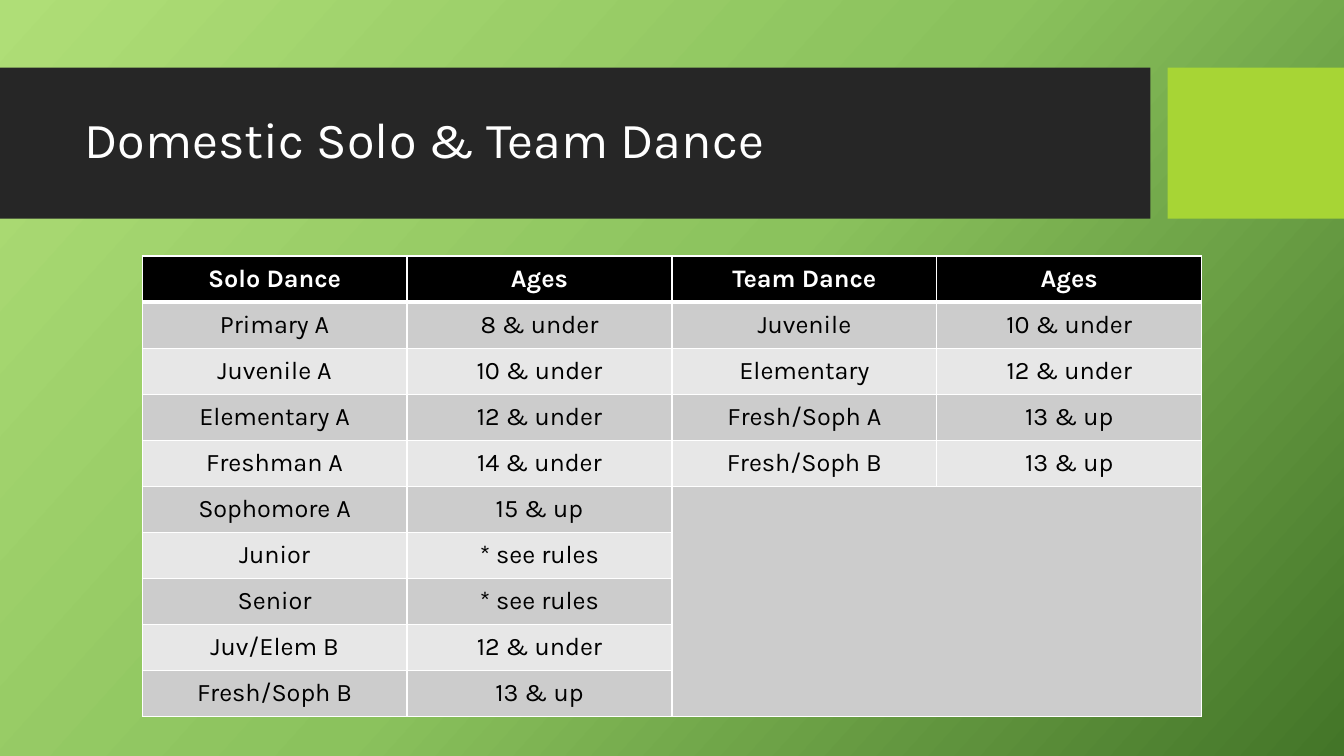
import copy

import pptx
import pptx.dml.color
import pptx.enum.shapes
import pptx.enum.text
import pptx.oxml
import pptx.oxml.ns
import pptx.util

RGBColor = pptx.dml.color.RGBColor
WHITE = RGBColor(0xFF, 0xFF, 0xFF)
BLACK = RGBColor(0x00, 0x00, 0x00)
CHARCOAL = RGBColor(0x26, 0x26, 0x26)
LIME = RGBColor(0xA7, 0xD5, 0x35)
DARK_ROW = RGBColor(0xCC, 0xCC, 0xCC)
LIGHT_ROW = RGBColor(0xE7, 0xE7, 0xE7)
BACKDROP = [(0, RGBColor(0xAF, 0xDE, 0x77)),
            (0.5, RGBColor(0x8B, 0xC2, 0x5D)),
            (1, RGBColor(0x43, 0x75, 0x28))]

Inches = pptx.util.Inches
LEFT = pptx.enum.text.PP_ALIGN.LEFT
CENTER = pptx.enum.text.PP_ALIGN.CENTER


def write(frame, text, size=18, color=BLACK, bold=False, align=CENTER, spacing=1.0):
    frame.text = text
    paragraph = frame.paragraphs[0]
    paragraph.alignment = align
    paragraph.line_spacing = spacing
    font = paragraph.runs[0].font
    font.name = "Karla"
    font.size = pptx.util.Pt(size)
    font.bold = bold
    font.color.rgb = color


def set_borders(cell, **widths):
    properties = cell._tc.get_or_add_tcPr()
    for position, side in enumerate("LRTB"):
        line = pptx.oxml.parse_xml(
            f'<a:ln{side} {pptx.oxml.ns.nsdecls("a")} w="{pptx.util.Pt(widths.get(side, 1))}">'
            f'<a:solidFill><a:srgbClr val="{WHITE}"/></a:solidFill></a:ln{side}>')
        properties.insert(position, line)


deck = pptx.Presentation()
deck.slide_width = Inches(13.33)
deck.slide_height = Inches(7.5)
slide = deck.slides.add_slide(deck.slide_layouts[5])

# Green diagonal background
backdrop = slide.background.fill
backdrop.gradient()
backdrop.gradient_angle = 360 - 42
stop_list = slide._element.find(".//" + pptx.oxml.ns.qn("a:gsLst"))
stop_list.insert(1, copy.deepcopy(stop_list[0]))
for stop, (position, color) in zip(backdrop.gradient_stops, BACKDROP):
    stop.position = position
    stop.color.rgb = color

# Title band and lime block
for left, width, color in [(0, 11.41, CHARCOAL), (11.58, 1.75, LIME)]:
    band = slide.shapes.add_shape(pptx.enum.shapes.MSO_SHAPE.RECTANGLE,
                                  Inches(left), Inches(0.67), Inches(width), Inches(1.5))
    band.shadow.inherit = False
    band.fill.solid()
    band.fill.fore_color.rgb = color
    band.line.fill.background()

# Title, brought in front of the band
title = slide.shapes.title
title.left, title.top = Inches(0.74), Inches(0.82)
title.width, title.height = Inches(10.51), Inches(1.18)
title.text_frame.vertical_anchor = pptx.enum.text.MSO_ANCHOR.MIDDLE
write(title.text_frame, "Domestic Solo & Team Dance", size=36, color=WHITE,
      align=LEFT, spacing=0.9)
slide.shapes._spTree.append(title._element)

# Dance divisions and their ages
divisions = [
    ["Solo Dance", "Ages", "Team Dance", "Ages"],
    ["Primary A", "8 & under", "Juvenile", "10 & under"],
    ["Juvenile A", "10 & under", "Elementary", "12 & under"],
    ["Elementary A", "12 & under", "Fresh/Soph A", "13 & up"],
    ["Freshman A", "14 & under", "Fresh/Soph B", "13 & up"],
    ["Sophomore A", "15 & up"],
    ["Junior", "* see rules"],
    ["Senior", "* see rules"],
    ["Juv/Elem B", "12 & under"],
    ["Fresh/Soph B", "13 & up"],
]
table_width = Inches(10.51)
ages = slide.shapes.add_table(len(divisions), 4, (deck.slide_width - table_width) // 2,
                              Inches(2.54), table_width, Inches(4.57)).table

for row, entries in enumerate(divisions):
    for column in range(4):
        cell = ages.cell(row, column)
        cell.vertical_anchor = pptx.enum.text.MSO_ANCHOR.MIDDLE
        cell.fill.solid()
        if row == 0:
            cell.fill.fore_color.rgb = BLACK
            set_borders(cell, B=3)
        else:
            cell.fill.fore_color.rgb = DARK_ROW if row % 2 else LIGHT_ROW
            set_borders(cell, T=3 if row == 1 else 1)
        if column < len(entries):
            write(cell.text_frame, entries[column], bold=row == 0,
                  color=BLACK if row else WHITE)

# Unused area below the team divisions
ages.cell(5, 2).merge(ages.cell(9, 3))

deck.save("out.pptx")
